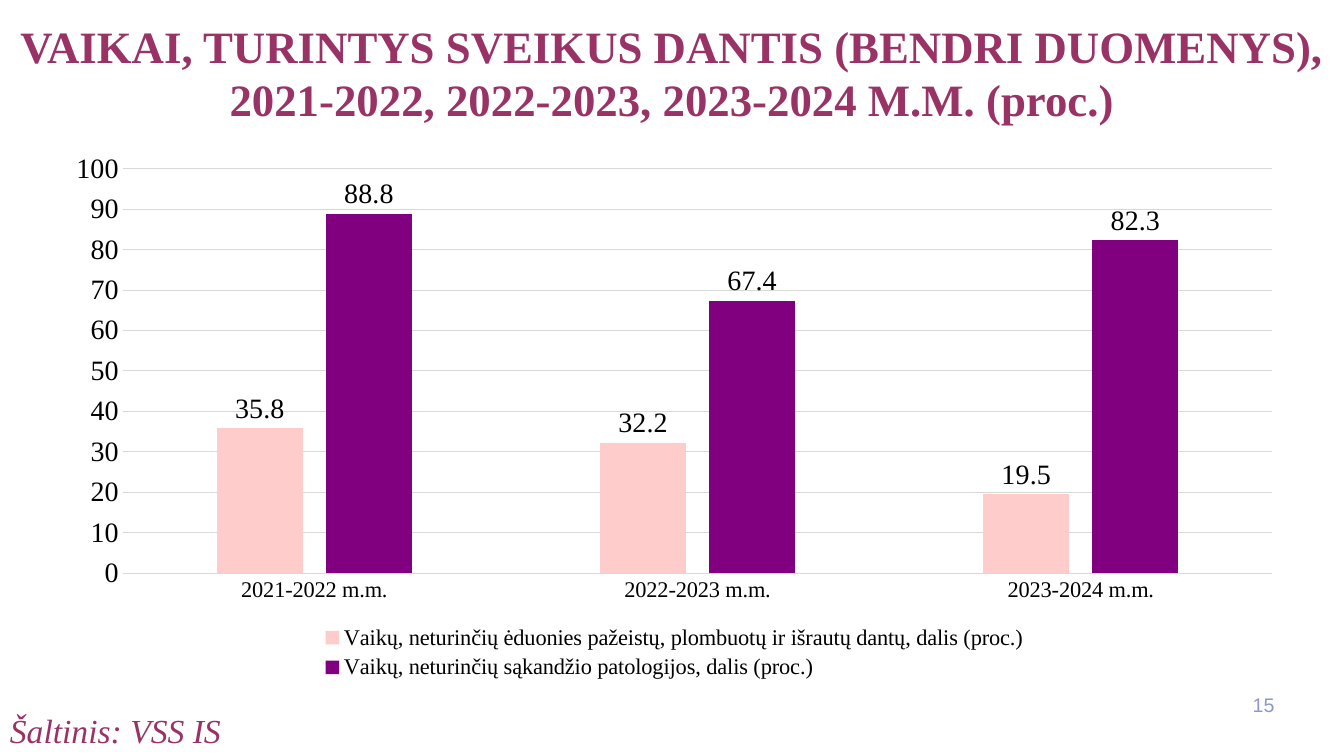
from pptx import Presentation
from pptx.chart.data import CategoryChartData
from pptx.dml.color import RGBColor
from pptx.enum.chart import XL_CHART_TYPE as ChartType
from pptx.enum.chart import XL_LABEL_POSITION as LabelPos
from pptx.enum.chart import XL_LEGEND_POSITION as LegendPos
from pptx.enum.chart import XL_TICK_MARK as Tick
from pptx.enum.text import MSO_ANCHOR as Anchor
from pptx.enum.text import MSO_AUTO_SIZE as AutoSize
from pptx.enum.text import PP_ALIGN as Align
from pptx.util import Pt

COLORS = {"title": "993366", "number": "8E96CD", "text": "000000",
          "grid": "D9D9D9", "healthy": "FFCCCC", "bite": "800080"}
SERIF = "Times New Roman"
YEARS = ["2021-2022 m.m.", "2022-2023 m.m.", "2023-2024 m.m."]
SERIES = [
    ("Vaikų, neturinčių ėduonies pažeistų, plombuotų ir išrautų dantų, dalis (proc.)",
     (35.8, 32.2, 19.5), "healthy"),
    ("Vaikų, neturinčių sąkandžio patologijos, dalis (proc.)",
     (88.8, 67.4, 82.3), "bite"),
]


def rgb(name):
    return RGBColor.from_string(COLORS[name])


def set_font(font, size, color="text", name=SERIF):
    font.size = Pt(size)
    font.name = name
    font.color.rgb = rgb(color)


def write(sp, text, size, color, name=SERIF, align=Align.LEFT,
          anchor=Anchor.TOP, bold=False, italic=False):
    tf = sp.text_frame
    tf.word_wrap = True
    tf.auto_size = AutoSize.NONE
    tf.vertical_anchor = anchor
    p = tf.paragraphs[0]
    p.alignment = align
    r = p.add_run()
    r.text = text
    set_font(r.font, size, color, name)
    r.font.bold = bold
    r.font.italic = italic


def add_title(s, x, y, w, h):
    sp = s.shapes.title
    sp.left, sp.top, sp.width, sp.height = Pt(x), Pt(y), Pt(w), Pt(h)
    write(sp, "VAIKAI, TURINTYS SVEIKUS DANTIS (BENDRI DUOMENYS), "
          "2021-2022, 2022-2023, 2023-2024 M.M. (proc.)",
          32, "title", align=Align.CENTER, bold=True)


def add_teeth_chart(s, x, y, w, h):
    data = CategoryChartData(number_format="General")
    data.categories = YEARS
    for name, values, _ in SERIES:
        data.add_series(name, values)
    chart = s.shapes.add_chart(ChartType.COLUMN_CLUSTERED, Pt(x), Pt(y),
                               Pt(w), Pt(h), data).chart
    set_font(chart.font, 10, name="Calibri")
    chart.has_title = False
    chart.has_legend = True
    chart.legend.position = LegendPos.BOTTOM
    chart.legend.include_in_layout = False
    set_font(chart.legend.font, 16)

    for axis, size in ((chart.category_axis, 16), (chart.value_axis, 20)):
        axis.major_tick_mark = axis.minor_tick_mark = Tick.NONE
        set_font(axis.tick_labels.font, size)
    value_axis = chart.value_axis
    value_axis.minimum_scale, value_axis.maximum_scale = 0, 100
    value_axis.major_unit = 10
    value_axis.format.line.fill.background()
    for line in (chart.category_axis.format.line,
                 value_axis.major_gridlines.format.line):
        line.color.rgb = rgb("grid")
        line.width = Pt(0.75)

    plot = chart.plots[0]
    plot.gap_width, plot.overlap = 219, -27
    plot.vary_by_categories = False
    for series, (_, _, color) in zip(plot.series, SERIES):
        series.format.fill.solid()
        series.format.fill.fore_color.rgb = rgb(color)
        labels = series.data_labels
        labels.show_value = True
        labels.position = LabelPos.OUTSIDE_END
        set_font(labels.font, 20)


def add_source(s, x, y, w, h):
    sp = s.shapes.add_textbox(Pt(x), Pt(y), Pt(w), Pt(h))
    write(sp, "Šaltinis: VSS IS", 24, "title", italic=True)


def add_number(s, x, y, w, h):
    sp = s.shapes.add_textbox(Pt(x), Pt(y), Pt(w), Pt(h))
    write(sp, "15", 14, "number", name="Arial", align=Align.RIGHT,
          anchor=Anchor.MIDDLE)


def main():
    prs = Presentation()
    prs.slide_width, prs.slide_height = Pt(960), Pt(540)
    s = prs.slides.add_slide(prs.slide_layouts[5])
    add_number(s, 880, 489, 37.5, 28.75)
    add_teeth_chart(s, 36.7, 101.5, 890, 387.4)
    add_title(s, 0, 9.4, 960, 85)
    add_source(s, 0, 503.3, 480, 36)
    prs.save("out.pptx")


if __name__ == "__main__":
    main()
